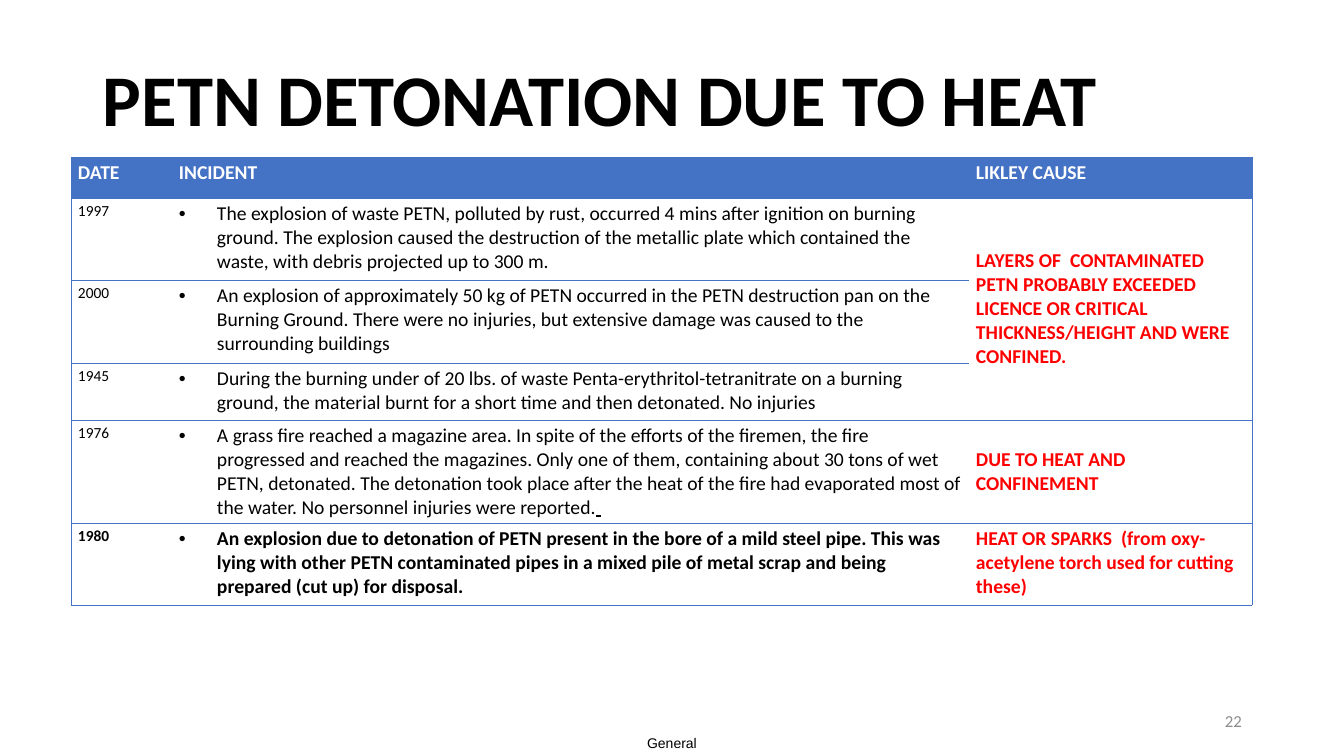
from lxml import etree
from pptx import Presentation
from pptx.dml.color import RGBColor
from pptx.enum.text import MSO_ANCHOR, PP_ALIGN
from pptx.oxml.ns import qn
from pptx.util import Emu, Pt

TOP, MIDDLE = MSO_ANCHOR.TOP, MSO_ANCHOR.MIDDLE
LEFT, CENTER, RIGHT = PP_ALIGN.LEFT, PP_ALIGN.CENTER, PP_ALIGN.RIGHT

PX_PER_INCH = 100.8
BLUE, RED, BLACK, WHITE, GREY = "4472C4", "FF0000", "000000", "FFFFFF", "8C8C8C"
BLANK_LAYOUT = 6
BULLET_INDENT = 38

COLUMN_WIDTHS = [101, 797, 283]
ROW_HEIGHTS = [41, 82, 83, 57, 103, 82]
HEADINGS = ["DATE", "INCIDENT", "LIKLEY CAUSE"]
INCIDENTS = [
    ("1997", "The explosion of waste PETN, polluted by rust, occurred 4 mins after ignition on "
     "burning ground. The explosion caused the destruction of the metallic plate which "
     "contained the waste, with debris projected up to 300 m."),
    ("2000", "An explosion of approximately 50 kg of PETN occurred in the PETN destruction pan "
     "on the Burning Ground. There were no injuries, but extensive damage was caused to the "
     "surrounding buildings"),
    ("1945", "During the burning under of 20 lbs. of waste Penta-erythritol-tetranitrate on a "
     "burning ground, the material burnt for a short time and then detonated. No injuries"),
    ("1976", "A grass fire reached a magazine area. In spite of the efforts of the firemen, the "
     "fire progressed and reached the magazines. Only one of them, containing about 30 tons of "
     "wet PETN, detonated. The detonation took place after the heat of the fire had evaporated "
     "most of the water. No personnel injuries were reported."),
    ("1980", "An explosion due to detonation of PETN present in the bore of a mild steel pipe. "
     "This was lying with other PETN contaminated pipes in a mixed pile of metal scrap and being "
     "prepared (cut up) for disposal."),
]
CAUSES = [
    (1, 3, MIDDLE, "LAYERS OF  CONTAMINATED PETN PROBABLY EXCEEDED LICENCE OR CRITICAL "
     "THICKNESS/HEIGHT AND WERE CONFINED."),
    (4, 4, MIDDLE, "DUE TO HEAT AND CONFINEMENT"),
    (5, 5, TOP, "HEAT OR SPARKS  (from oxy-acetylene torch used for cutting these)"),
]
UNDERLINED_ROW = 4
BOLD_ROW = 5


def px(length):
    return Emu(round(length * 914400 / PX_PER_INCH))


def color(value):
    return RGBColor.from_string(value)


def style_span(span, size, shade, bold=False, font="Calibri"):
    span.font.name = font
    span.font.size = Pt(size)
    span.font.bold = bold
    span.font.color.rgb = color(shade)


def add_label(page, box, text, size, shade, align=LEFT, bold=False, font="Calibri", inset=(10, 5)):
    frame = page.shapes.add_textbox(*map(px, box)).text_frame
    frame.word_wrap = True
    frame.vertical_anchor = MIDDLE
    frame.margin_left = frame.margin_right = px(inset[0])
    frame.margin_top = frame.margin_bottom = px(inset[1])
    frame.text = text
    para = frame.paragraphs[0]
    para.alignment = align
    style_span(para.runs[0], size, shade, bold, font)
    return para


def add_title(page, box):
    para = add_label(page, box, "PETN DETONATION DUE TO HEAT", 52, BLACK, bold=True)
    para.line_spacing = 0.9


def fill_cell(cell, text, size, shade, bold=False, anchor=TOP):
    cell.margin_left = cell.margin_right = px(7)
    cell.margin_top = cell.margin_bottom = px(4)
    cell.vertical_anchor = anchor
    cell.text = text
    para = cell.text_frame.paragraphs[0]
    style_span(para.runs[0], size, shade, bold)
    return para


def add_bullet(para):
    properties = para._p.get_or_add_pPr()
    properties.set("marL", str(px(BULLET_INDENT)))
    properties.set("indent", str(-px(BULLET_INDENT)))
    etree.SubElement(properties, qn("a:buFont")).set("typeface", "Arial")
    etree.SubElement(properties, qn("a:buChar")).set("char", "•")


def set_borders(cell, visible):
    properties = cell._tc.get_or_add_tcPr()
    for side in "LRTB":
        line = etree.SubElement(properties, qn("a:ln" + side))
        if side in visible:
            line.set("w", str(Pt(0.5)))
            fill = etree.SubElement(line, qn("a:solidFill"))
            etree.SubElement(fill, qn("a:srgbClr")).set("val", BLUE)
        else:
            etree.SubElement(line, qn("a:noFill"))


def frame_cells(table):
    last = len(COLUMN_WIDTHS) - 1
    cause_tops = {0} | {first for first, *_ in CAUSES}
    cause_bottoms = {0} | {end for _, end, *_ in CAUSES}
    for row in range(len(ROW_HEIGHTS)):
        for column in range(last + 1):
            cell = table.cell(row, column)
            visible = {0: "L", last: "R"}.get(column, "")
            if column < last or row in cause_tops:
                visible += "T"
            if column < last or row in cause_bottoms:
                visible += "B"
            set_borders(cell, visible)
            if row == 0:
                cell.fill.solid()
                cell.fill.fore_color.rgb = color(BLUE)
            else:
                cell.fill.background()


def add_incident_table(page, left, top):
    box = (left, top, sum(COLUMN_WIDTHS), sum(ROW_HEIGHTS))
    table = page.shapes.add_table(len(ROW_HEIGHTS), len(COLUMN_WIDTHS), *map(px, box)).table
    table.horz_banding = False
    for column, width in zip(table.columns, COLUMN_WIDTHS):
        column.width = px(width)
    for row, height in zip(table.rows, ROW_HEIGHTS):
        row.height = px(height)
    frame_cells(table)
    for column, heading in enumerate(HEADINGS):
        fill_cell(table.cell(0, column), heading, 14, WHITE, bold=True)
    for row, (date, incident) in enumerate(INCIDENTS, start=1):
        bold = row == BOLD_ROW
        fill_cell(table.cell(row, 0), date, 11, BLACK, bold)
        para = fill_cell(table.cell(row, 1), incident, 14, BLACK, bold)
        add_bullet(para)
        if row == UNDERLINED_ROW:
            span = para.add_run()
            span.text = " "
            style_span(span, 14, BLACK, bold=True)
            span.font.underline = True
    for first, end, anchor, cause in CAUSES:
        cell = table.cell(first, 2)
        if end > first:
            cell.merge(table.cell(end, 2))
        fill_cell(cell, cause, 14, RED, bold=True, anchor=anchor)


def add_footer(page, number_box, label_box):
    add_label(page, number_box, "22", 12, GREY, RIGHT)
    add_label(page, label_box, "General", 10, BLACK, CENTER, font="Arial", inset=(0, 0))


def main():
    deck = Presentation()
    deck.slide_width, deck.slide_height = px(1344), px(756)
    page = deck.slides.add_slide(deck.slide_layouts[BLANK_LAYOUT])
    add_title(page, (93, 20, 1159, 166))
    add_incident_table(page, 71, 157)
    add_footer(page, (950, 701, 302, 40), (632, 729, 80, 27))
    deck.save("out.pptx")


if __name__ == "__main__":
    main()
